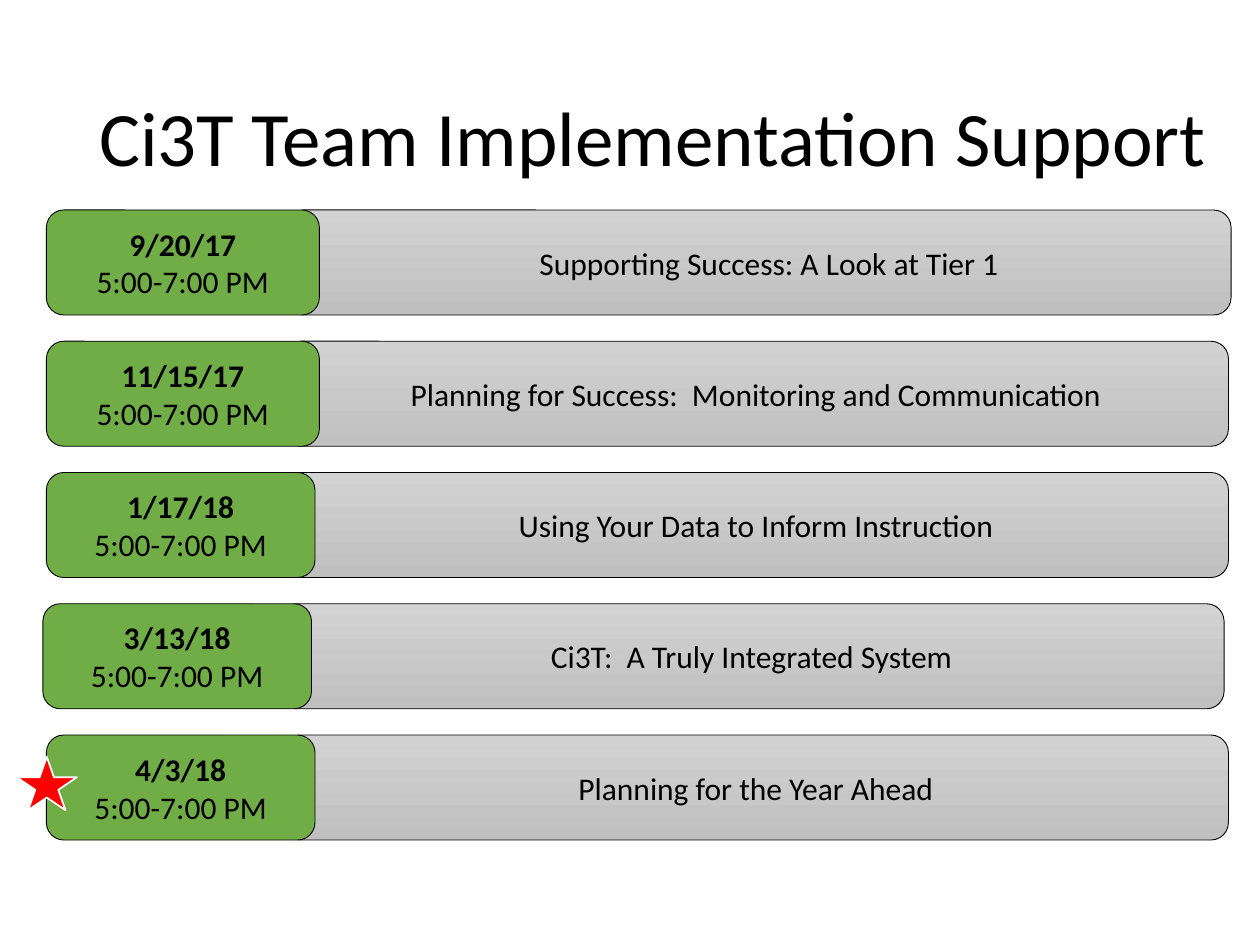
from pptx import Presentation
from pptx.dml.color import RGBColor
from pptx.enum.shapes import MSO_SHAPE as Shape
from pptx.enum.text import MSO_ANCHOR as Anchor, MSO_AUTO_SIZE as AutoSize, PP_ALIGN as Align
from pptx.util import Pt

COLORS = {
    "text": "000000",
    "outline": "000000",
    "date": "70AD47",
    "bar_top": "D2D2D2",
    "bar_bottom": "C0C0C0",
    "star": "FF0000",
    "star_edge": "FFFFFF",
}
FONT = "Calibri"


def color(name):
    return RGBColor.from_string(COLORS[name])


class Schedule:
    """Holds the text style and the slide being built."""

    def __init__(self, slide, body_size=18, title_size=44):
        self.slide = slide
        self.body_size = body_size
        self.title_size = title_size

    def add_run(self, paragraph, text, size, bold=False):
        run = paragraph.add_run()
        run.text = text
        run.font.name = FONT
        run.font.size = Pt(size)
        run.font.bold = bold
        run.font.color.rgb = color("text")

    def title(self, text, left, top, width, height):
        heading = self.slide.shapes.title
        heading.left, heading.top = Pt(left), Pt(top)
        heading.width, heading.height = Pt(width), Pt(height)
        frame = heading.text_frame
        frame.word_wrap = True
        frame.auto_size = AutoSize.NONE
        frame.vertical_anchor = Anchor.MIDDLE
        paragraph = frame.paragraphs[0]
        paragraph.alignment = Align.LEFT
        paragraph.line_spacing = 0.9
        self.add_run(paragraph, text, self.title_size)

    def shape(self, kind, left, top, width, height, edge="outline", edge_width=0.5):
        item = self.slide.shapes.add_shape(kind, Pt(left), Pt(top), Pt(width), Pt(height))
        item.shadow.inherit = False
        item.line.color.rgb = color(edge)
        item.line.width = Pt(edge_width)
        return item

    def label(self, item, lines):
        frame = item.text_frame
        frame.word_wrap = True
        frame.vertical_anchor = Anchor.MIDDLE
        for index, (text, bold) in enumerate(lines):
            paragraph = frame.add_paragraph() if index else frame.paragraphs[0]
            paragraph.alignment = Align.CENTER
            self.add_run(paragraph, text, self.body_size, bold)

    def topic(self, text, left, top, width, height, inset):
        bar = self.shape(Shape.ROUNDED_RECTANGLE, left, top, width, height)
        bar.fill.gradient()
        bar.fill.gradient_angle = 270
        for stop, name in zip(bar.fill.gradient_stops, ("bar_top", "bar_bottom")):
            stop.color.rgb = color(name)
        bar.text_frame.margin_left = Pt(inset)
        self.label(bar, [(text, False)])

    def date(self, day, hours, left, top, width, height):
        tag = self.shape(Shape.ROUNDED_RECTANGLE, left, top, width, height)
        tag.fill.solid()
        tag.fill.fore_color.rgb = color("date")
        self.label(tag, [(day, True), (hours, False)])

    def star(self, left, top, width, height):
        marker = self.shape(Shape.STAR_5_POINT, left, top, width, height, "star_edge", 1)
        marker.fill.solid()
        marker.fill.fore_color.rgb = color("star")


# Day, topic, date left, date width, topic left, topic inset
SESSIONS = [
    ("9/20/17", "Supporting Success: A Look at Tier 1", 26.5, 156, 163.5, 19.2),
    ("11/15/17", "Planning for Success:  Monitoring and Communication", 26.5, 156, 162, 7.2),
    ("1/17/18", "Using Your Data to Inform Instruction", 26.5, 153.5, 162, 7.2),
    ("3/13/18", "Ci3T:  A Truly Integrated System", 24.5, 153.5, 159.5, 7.2),
    ("4/3/18", "Planning for the Year Ahead", 26.5, 153.5, 162, 7.2),
]
HOURS = "5:00-7:00 PM"
FIRST_TOP, ROW_PITCH, ROW_HEIGHT, TOPIC_WIDTH = 120, 75, 60, 540


def main():
    deck = Presentation()
    deck.slide_width, deck.slide_height = Pt(720), Pt(540)
    schedule = Schedule(deck.slides.add_slide(deck.slide_layouts[5]))

    # Title
    schedule.title("Ci3T Team Implementation Support", 49.5, 29, 652.5, 104)

    # One row per session, the date overlapping its topic
    for row, (day, topic, date_left, date_width, topic_left, inset) in enumerate(SESSIONS):
        top = FIRST_TOP + row * ROW_PITCH
        schedule.topic(topic, topic_left, top, TOPIC_WIDTH, ROW_HEIGHT, inset)
        schedule.date(day, HOURS, date_left, top, date_width, ROW_HEIGHT)

    # Marker on the last session
    schedule.star(9.5, 432.5, 34.5, 30.5)

    deck.save("out.pptx")


if __name__ == "__main__":
    main()
